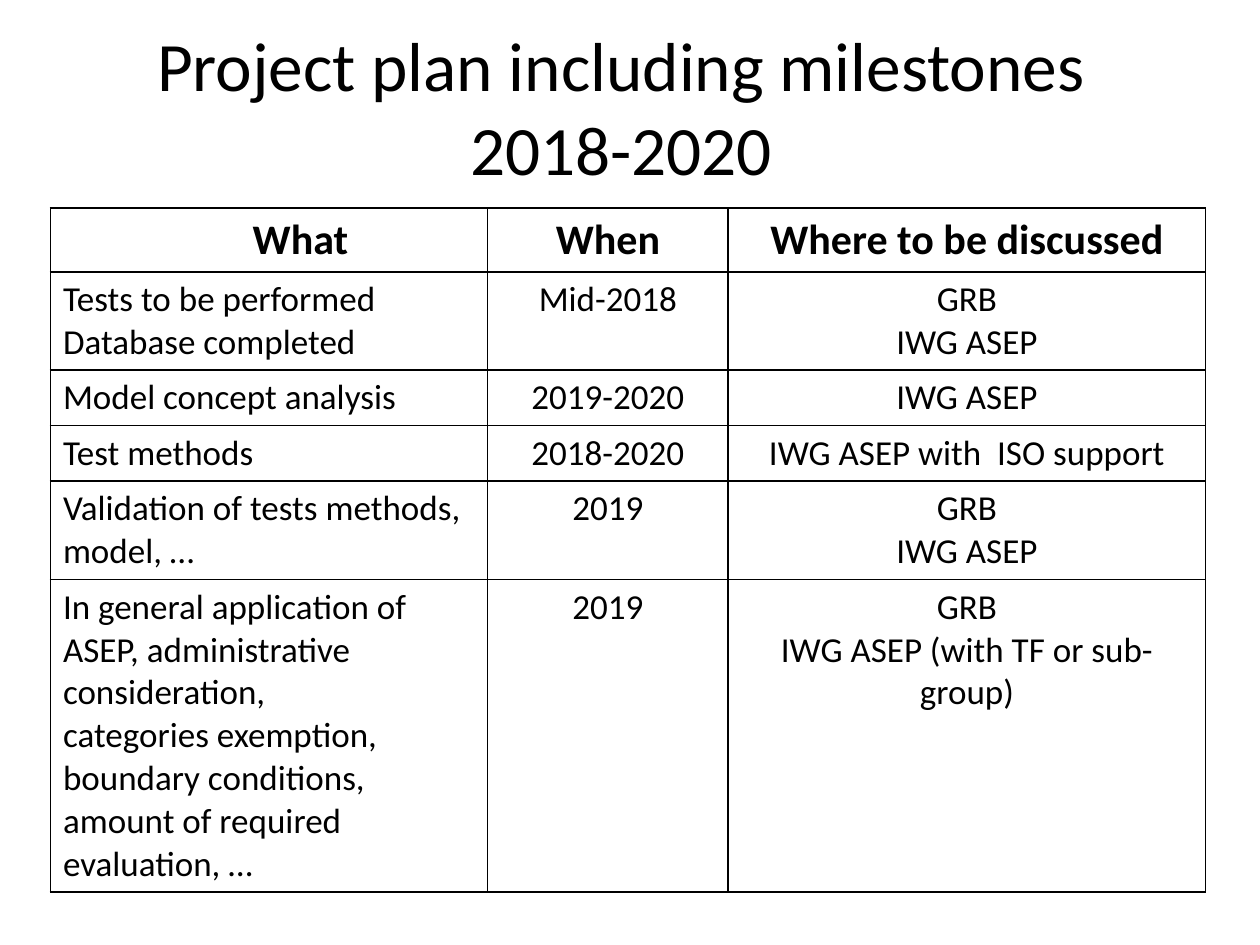
from dataclasses import dataclass
from typing import Any

from pptx import Presentation as Deck
from pptx.dml.color import RGBColor as Color
from pptx.enum.text import MSO_ANCHOR as Anchor, MSO_AUTO_SIZE as Fit, PP_ALIGN as Align
from pptx.oxml import parse_xml
from pptx.oxml.ns import nsdecls
from pptx.util import Inches, Pt

WIDTHS = [3.47, 1.91, 3.79]
HEAD = ["What", "When", "Where to be discussed"]
PLAN = [
    ["Tests to be performed\nDatabase completed", "Mid-2018", "GRB\nIWG ASEP"],
    ["Model concept analysis", "2019-2020", "IWG ASEP"],
    ["Test methods", "2018-2020", "IWG ASEP with  ISO support"],
    ["Validation of tests methods, model, …", "2019", "GRB\nIWG ASEP"],
    ["In general application of ASEP, administrative consideration,\n"
     "categories exemption, boundary conditions, amount of required evaluation, …",
     "2019", "GRB\nIWG ASEP (with TF or sub-group)"],
]


def paint(code):
    return Color.from_string(code)


@dataclass
class Page:
    slide: Any
    font: str = "Calibri"
    ink: str = "000000"
    paper: str = "FFFFFF"

    def add_text(self, para, text, size, bold=False):
        run = para.add_run()
        run.text = text
        run.font.name = self.font
        run.font.size = Pt(size)
        run.font.bold = bold
        run.font.color.rgb = paint(self.ink)

    def title(self, lines, box, size):
        shape = self.slide.shapes.title
        shape.left, shape.top, shape.width, shape.height = map(Inches, box)
        frame = shape.text_frame
        frame.auto_size = Fit.NONE
        frame.word_wrap = True
        frame.vertical_anchor = Anchor.MIDDLE
        para = frame.paragraphs[0]
        para.alignment = Align.CENTER
        for i, line in enumerate(lines):
            if i:
                para.add_line_break()
            self.add_text(para, line, size)

    def edge(self, cell):
        props = cell._tc.get_or_add_tcPr()
        for side in "LRTB":
            props.append(parse_xml(
                f'<a:ln{side} {nsdecls("a")} w="{Pt(1)}"><a:solidFill>'
                f'<a:srgbClr val="{self.ink}"/></a:solidFill></a:ln{side}>'))

    def cell(self, cell, text, size, bold, align, inset):
        self.edge(cell)
        cell.fill.solid()
        cell.fill.fore_color.rgb = paint(self.paper)
        frame = cell.text_frame
        for i, line in enumerate(text.split("\n")):
            para = frame.add_paragraph() if i else frame.paragraphs[0]
            para.alignment = align
            if inset:
                props = para._p.get_or_add_pPr()
                props.set("marL", str(Inches(inset)))
                props.set("indent", "0")
            self.add_text(para, line, size, bold)

    def table(self, rows, widths, left, top, step):
        frame = self.slide.shapes.add_table(
            len(rows), len(widths), Inches(left), Inches(top),
            Inches(sum(widths)), Inches(step * len(rows)))
        grid = frame.table
        grid.first_row = grid.horz_banding = False
        for col, width in zip(grid.columns, widths):
            col.width = Inches(width)
        for r, row in enumerate(rows):
            grid.rows[r].height = Inches(step)
            head = r == 0
            for c, text in enumerate(row):
                align = Align.CENTER if head or c else Align.LEFT
                inset = 0.5 if head and c == 0 else 0
                self.cell(grid.cell(r, c), text, 24 if head else 20, head, align, inset)


def main():
    deck = Deck()
    deck.slide_width, deck.slide_height = Inches(10), Inches(7.5)
    page = Page(deck.slides.add_slide(deck.slide_layouts[5]))
    page.title(["Project plan including milestones", "2018-2020"], (0.43, 0.36, 9, 0.96), 39.6)
    page.table([HEAD] + PLAN, WIDTHS, 0.4, 1.65, 0.41)
    deck.save("out.pptx")


if __name__ == "__main__":
    main()
